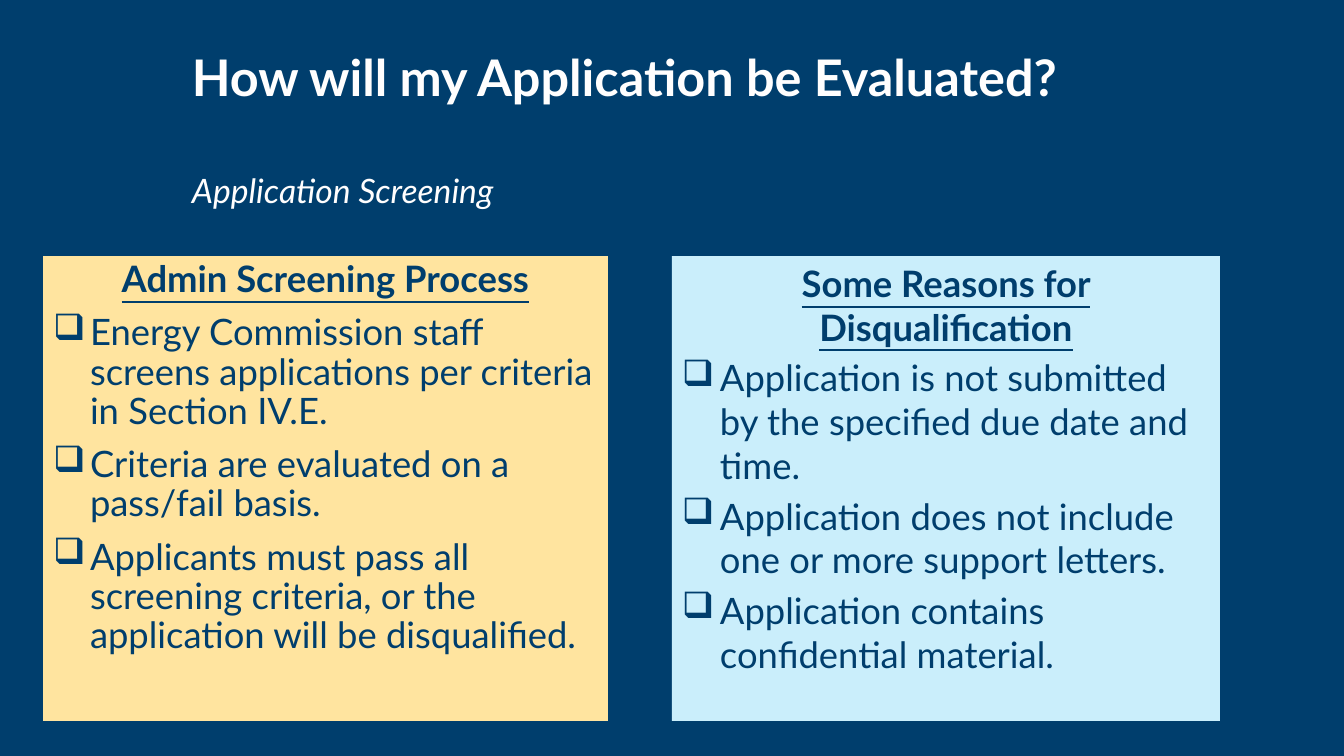
from dataclasses import dataclass

from lxml.etree import SubElement
from pptx import Presentation
from pptx.dml.color import RGBColor
from pptx.enum.shapes import MSO_SHAPE
from pptx.enum.text import MSO_ANCHOR, PP_ALIGN
from pptx.oxml.ns import qn
from pptx.util import Emu, Pt


@dataclass(frozen=True)
class Theme:
    font: str = "Lato"
    navy: str = "003E6D"
    white: str = "FFFEFE"
    yellow: str = "FFE49F"
    sky: str = "CAEEFB"
    title_size: int = 36
    subtitle_size: int = 24
    panel_size: int = 26


THEME = Theme()
PX = 914400 / 100.8
SLIDE_SIZE = (1344, 756)
PANEL_TOP, PANEL_HEIGHT = 256, 465
CHECKBOX = "❑"

HEADINGS = [
    {"text": "How will my Application be Evaluated?", "at": (182, 47, 1010, 61),
     "format": {"size": THEME.title_size, "bold": True, "line": 0.6}},
    {"text": "Application Screening", "at": (182, 163, 832, 61),
     "format": {"size": THEME.subtitle_size, "italic": True, "line": Pt(20)}},
]

PANELS = [
    {"title": "Admin Screening Process",
     "items": [
         "Energy Commission staff screens applications per criteria in Section IV.E.",
         "Criteria are evaluated on a pass/fail basis.",
         "Applicants must pass all screening criteria, or the application will be disqualified.",
     ],
     "left": 43, "width": 565, "fill": THEME.yellow, "indent": 37, "line": 0.9, "before": 10},
    {"title": "Some Reasons for Disqualification",
     "items": [
         "Application is not submitted by the specified due date and time.",
         "Application does not include one or more support letters.",
         "Application contains confidential material.",
     ],
     "left": 672, "width": 548, "fill": THEME.sky, "indent": 38, "line": 1.0, "before": 5.2},
]


def px(length):
    return Emu(round(length * PX))


def set_bullet(para, indent):
    properties = para._p.get_or_add_pPr()
    properties.set("marL", str(px(indent)))
    properties.set("indent", str(-px(indent)))
    SubElement(properties, qn("a:buChar")).set("char", CHECKBOX)


def write(para, text, *, size, color, bold=False, italic=False, underline=False,
          align=PP_ALIGN.LEFT, line=1.0, before=0, bullet_indent=None):
    if bullet_indent:
        set_bullet(para, bullet_indent)
    para.alignment = align
    para.line_spacing = line
    para.space_before = Pt(before)
    span = para.add_run()
    span.text = text
    span.font.name = THEME.font
    span.font.size = Pt(size)
    span.font.color.rgb = RGBColor.from_string(color)
    span.font.bold, span.font.italic, span.font.underline = bold, italic, underline


def prepare_frame(box, sides, top, bottom):
    frame = box.text_frame
    frame.word_wrap = True
    frame.vertical_anchor = MSO_ANCHOR.TOP
    frame.margin_left = frame.margin_right = px(sides)
    frame.margin_top, frame.margin_bottom = px(top), px(bottom)
    return frame


def add_heading(page, heading):
    box = page.shapes.add_textbox(*map(px, heading["at"]))
    frame = prepare_frame(box, 10, 20, 10)
    write(frame.paragraphs[0], heading["text"], color=THEME.white, **heading["format"])


def add_panel(page, panel):
    area = (panel["left"], PANEL_TOP, panel["width"], PANEL_HEIGHT)
    box = page.shapes.add_shape(MSO_SHAPE.RECTANGLE, *map(px, area))
    box.shadow.inherit = False
    box.fill.solid()
    box.fill.fore_color.rgb = RGBColor.from_string(panel["fill"])
    box.line.fill.background()
    frame = prepare_frame(box, 10, 5, 5)
    common = {"size": THEME.panel_size, "color": THEME.navy, "line": panel["line"]}
    write(frame.paragraphs[0], panel["title"], bold=True, underline=True,
          align=PP_ALIGN.CENTER, **common)
    for item in panel["items"]:
        write(frame.add_paragraph(), item, before=panel["before"],
              bullet_indent=panel["indent"], **common)


def main():
    deck = Presentation()
    deck.slide_width, deck.slide_height = map(px, SLIDE_SIZE)
    page = deck.slides.add_slide(deck.slide_layouts[6])
    page.background.fill.solid()
    page.background.fill.fore_color.rgb = RGBColor.from_string(THEME.navy)
    for heading in HEADINGS:
        add_heading(page, heading)
    for panel in PANELS:
        add_panel(page, panel)
    deck.save("out.pptx")


if __name__ == "__main__":
    main()
